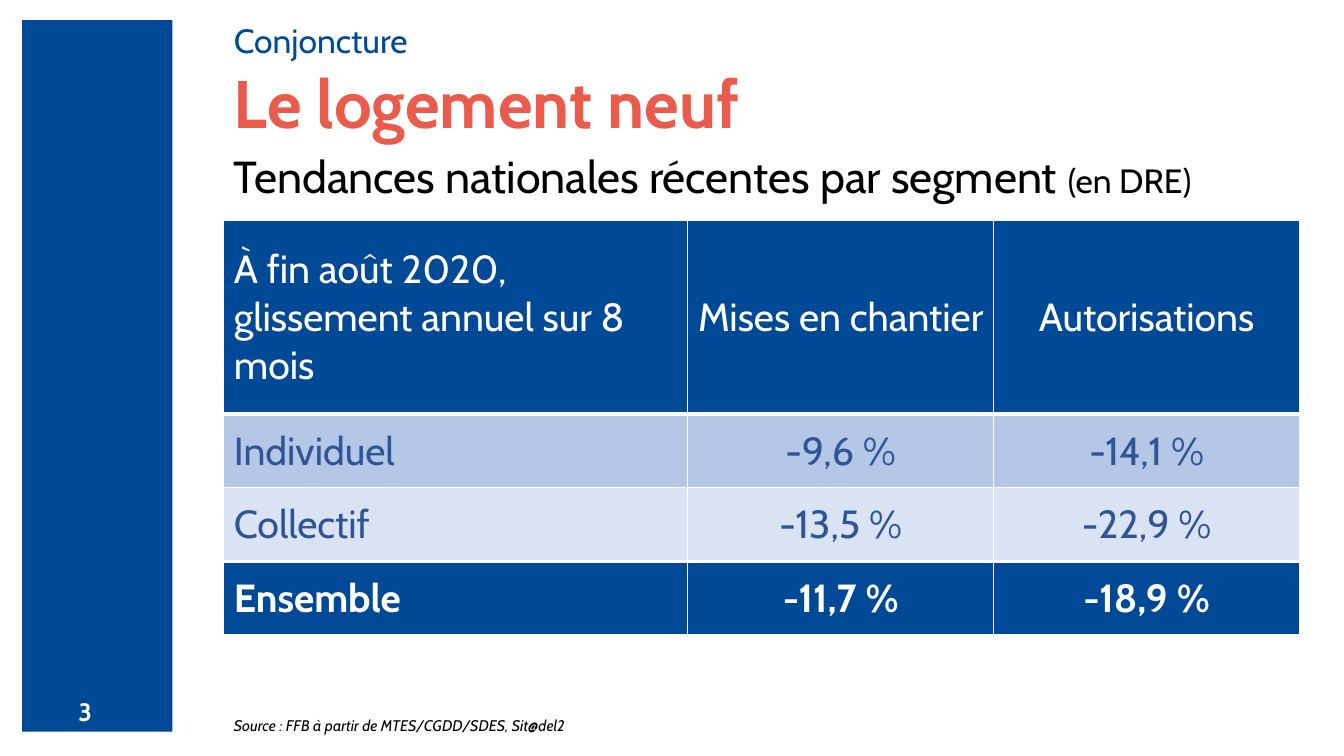
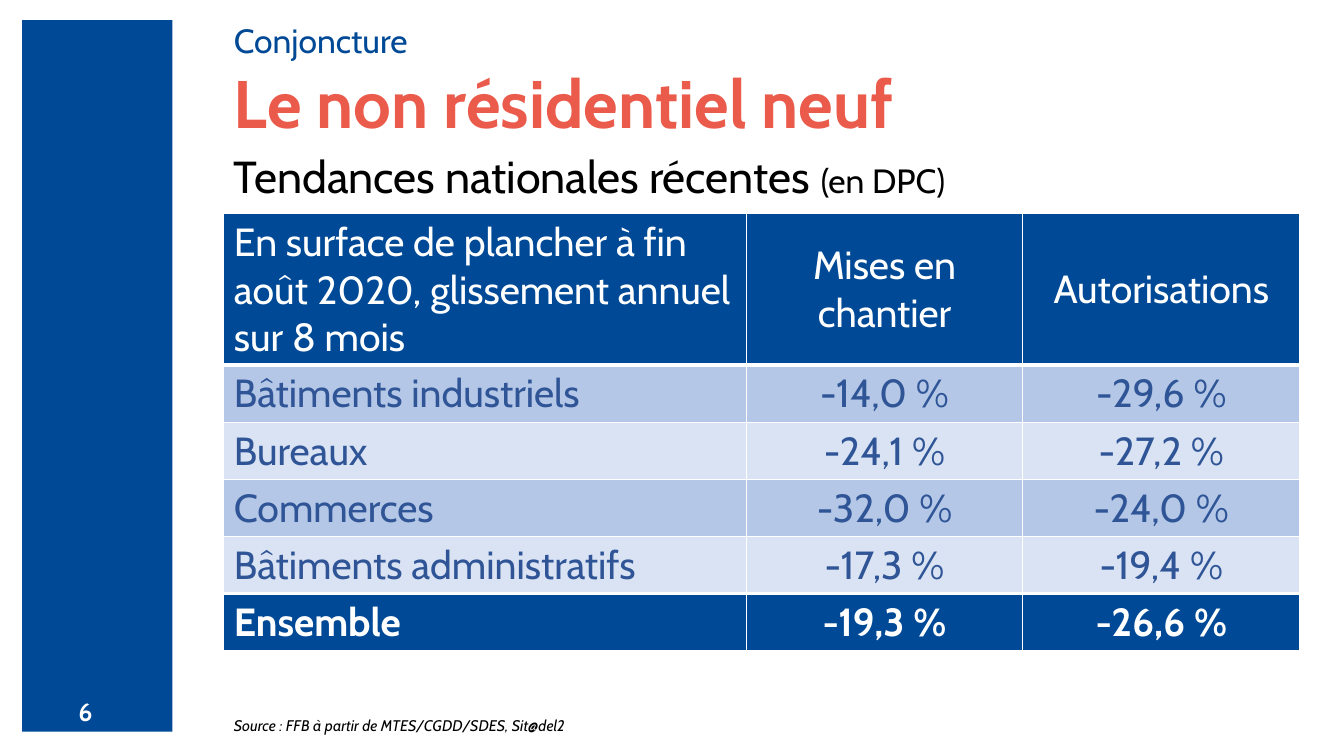
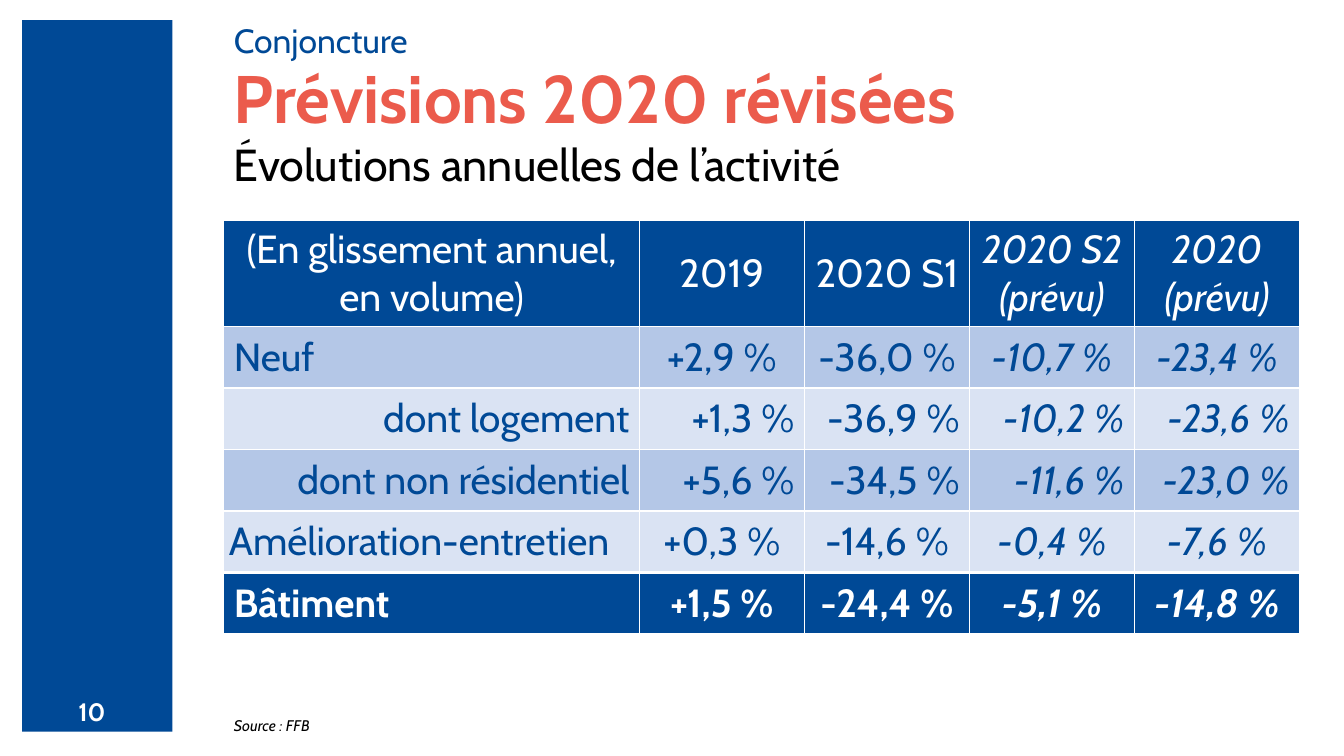
from dataclasses import dataclass

from lxml.etree import SubElement
from pptx import Presentation
from pptx.dml.color import RGBColor
from pptx.enum.shapes import MSO_SHAPE as Shape
from pptx.enum.text import MSO_ANCHOR as Anchor, MSO_AUTO_SIZE as AutoSize, PP_ALIGN as Align
from pptx.oxml.ns import qn
from pptx.util import Inches, Pt

BLUE = RGBColor(0x00, 0x49, 0x96)
SLATE = RGBColor(0x2F, 0x55, 0x97)
CORAL = RGBColor(0xEB, 0x5B, 0x4C)
WHITE = RGBColor(0xFF, 0xFF, 0xFF)
BLACK = RGBColor(0x00, 0x00, 0x00)
BANDS = (RGBColor(0xB4, 0xC7, 0xE7), RGBColor(0xDA, 0xE3, 0xF3))
FONT = "Cabin"
COMPARISON_LAYOUT = 4
LEFT, TEXT_WIDTH, TABLE_WIDTH = 2.22, 10.66, 10.67


@dataclass
class Trend:
    """Content and measures of one table slide."""

    page: int
    headline: str
    subtitle: str
    unit: str
    source: str
    rows: list
    label_width: float
    header_height: float
    row_height: float
    table_top: float = 2.19
    headline_top: float = 0.65
    subtitle_top: float = 1.49
    label_color: RGBColor = SLATE
    header_rule: float = 3
    header_align: Align = Align.LEFT
    forecast_from: int = 99
    detail_rows: tuple = ()
    tight_rows: tuple = ()


def style(paragraph, size, color, bold=False, italic=False):
    """Format every run of a paragraph."""
    for run in paragraph.runs:
        font = run.font
        font.name, font.size = FONT, Pt(size)
        font.bold, font.italic = bold, italic
        font.color.rgb = color


def place(shape, box):
    """Move a shape to a box given in inches."""
    shape.left, shape.top, shape.width, shape.height = map(Inches, box)


def fill_placeholder(holder, box, text, size, color, bold=False, italic=False, anchor=Anchor.TOP):
    """Place a template placeholder and write one plain line in it."""
    place(holder, box)
    frame = holder.text_frame
    frame.text = text
    frame.word_wrap, frame.auto_size = True, AutoSize.NONE
    frame.vertical_anchor = anchor
    line = frame.paragraphs[0]
    properties = line._p.get_or_add_pPr()
    properties.set("marL", "0")
    properties.set("indent", "0")
    SubElement(properties, qn("a:buNone"))
    line.alignment, line.line_spacing, line.space_before = Align.LEFT, 0.9, Pt(0)
    style(line, size, color, bold, italic)
    return line


def add_side_band(slide, page, box):
    """Draw the blue side band with the page number at its foot."""
    left, top, width, height = box
    band = slide.shapes.add_shape(Shape.RECTANGLE, *map(Inches, box))
    band.shadow.inherit = False
    band.fill.solid()
    band.fill.fore_color.rgb = BLUE
    band.line.fill.background()
    number = slide.shapes.add_textbox(
        Inches(left + 0.46), Inches(top + height - 0.4), Inches(0.56), Inches(0.4))
    number.text_frame.word_wrap = True
    number.text_frame.text = str(page)
    style(number.text_frame.paragraphs[0], 18, WHITE, bold=True)


def add_headings(slide, trend):
    """Fill the title, headline, subtitle and source placeholders."""
    title, headline, subtitle, source, spare = slide.placeholders
    fill_placeholder(title, (LEFT, 0.26, TEXT_WIDTH, 0.39), "Conjoncture", 24, BLUE,
                     anchor=Anchor.BOTTOM)
    fill_placeholder(headline, (LEFT, trend.headline_top, TEXT_WIDTH, 0.83),
                     trend.headline, 48, CORAL, bold=True)
    line = fill_placeholder(subtitle, (LEFT, trend.subtitle_top, TEXT_WIDTH, 0.5),
                            trend.subtitle, 32, BLACK)
    if trend.unit:
        unit = line.add_run()
        unit.text = trend.unit
        unit.font.name, unit.font.size, unit.font.bold = FONT, Pt(24), False
        unit.font.color.rgb = BLACK
    fill_placeholder(source, (LEFT, 7.07, 3.89, 0.24), trend.source, 11, BLACK, italic=True)
    spare._element.getparent().remove(spare._element)


def set_borders(cell, top, bottom):
    """Give a cell white borders, with its own top and bottom weights."""
    properties = cell._tc.get_or_add_tcPr()
    sides = (("a:lnL", 1), ("a:lnR", 1), ("a:lnT", top), ("a:lnB", bottom))
    for position, (tag, weight) in enumerate(sides):
        edge = SubElement(properties, qn(tag), w=str(Pt(weight)))
        SubElement(SubElement(edge, qn("a:solidFill")), qn("a:srgbClr"), val=str(WHITE))
        properties.insert(position, edge)


def add_trend_table(slide, trend, box):
    """Build the table: header row, striped segments and a total row."""
    last = len(trend.rows) - 1
    columns = len(trend.rows[0])
    table = slide.shapes.add_table(last + 1, columns, *map(Inches, box)).table
    table.first_row = table.horz_banding = False
    value_width = (box[2] - trend.label_width) / (columns - 1)
    for c, column in enumerate(table.columns):
        column.width = Inches(value_width if c else trend.label_width)
    rules = [1, trend.header_rule] + [1] * (last - 2) + [2.25, 1]

    for r, texts in enumerate(trend.rows):
        table.rows[r].height = Inches(trend.row_height if r else trend.header_height)
        strong = r in (0, last)
        for c, text in enumerate(texts):
            cell = table.cell(r, c)
            cell.text = text
            cell.vertical_anchor = Anchor.MIDDLE
            cell.fill.solid()
            cell.fill.fore_color.rgb = BLUE if strong else BANDS[(r - 1) % 2]
            set_borders(cell, rules[r], rules[r + 1])
            if c == 0 and r in trend.tight_rows:
                cell.margin_left = cell.margin_right = Inches(0.05)
            line = cell.text_frame.paragraphs[0]
            if r in trend.detail_rows:
                line.alignment = Align.RIGHT
            elif c:
                line.alignment = Align.CENTER
            else:
                line.alignment = Align.LEFT if r else trend.header_align
            style(line, 28, WHITE if strong else trend.label_color,
                  bold=r == last, italic=c >= trend.forecast_from)


def add_trend_slide(deck, trend):
    """Add one complete table slide."""
    slide = deck.slides.add_slide(deck.slide_layouts[COMPARISON_LAYOUT])
    add_side_band(slide, trend.page, (0.22, 0.2, 1.49, 7.06))
    add_headings(slide, trend)
    height = trend.header_height + trend.row_height * (len(trend.rows) - 1)
    add_trend_table(slide, trend, (LEFT, trend.table_top, TABLE_WIDTH, height))


SITADEL = "Source : FFB à partir de MTES/CGDD/SDES, Sit@del2"

TRENDS = [
    Trend(
        3, "Le logement neuf", "Tendances nationales récentes par segment ", "(en DRE)", SITADEL,
        [
            ("À fin août 2020, glissement annuel sur 8 mois", "Mises en chantier", "Autorisations"),
            ("Individuel", "-9,6 %", "-14,1 %"),
            ("Collectif", "-13,5 %", "-22,9 %"),
            ("Ensemble", "-11,7 %", "-18,9 %"),
        ],
        label_width=4.6, header_height=1.92, row_height=0.73,
    ),
    Trend(
        6, "Le non résidentiel neuf", "Tendances nationales récentes ", "(en DPC)", SITADEL,
        [
            ("En surface de plancher à fin août 2020, glissement annuel sur 8 mois",
             "Mises en chantier", "Autorisations"),
            ("Bâtiments industriels", "-14,0 %", "-29,6 %"),
            ("Bureaux", "-24,1 %", "-27,2 %"),
            ("Commerces", "-32,0 %", "-24,0 %"),
            ("Bâtiments administratifs", "-17,3 %", "-19,4 %"),
            ("Ensemble", "-19,3 %", "-26,6 %"),
        ],
        label_width=5.18, header_height=1.45, row_height=0.55, table_top=2.12,
    ),
    Trend(
        10, "Prévisions 2020 révisées", "Évolutions annuelles de l’activité", "", "Source : FFB",
        [
            ("(En glissement annuel, en volume)", "2019", "2020 S1", "2020 S2 (prévu)",
             "2020 (prévu)"),
            ("Neuf", "+2,9 %", "-36,0 %", "-10,7 %", "-23,4 %"),
            ("dont logement", "+1,3 %", "-36,9 %", "-10,2 %", "-23,6 %"),
            ("dont non résidentiel", "+5,6 %", "-34,5 %", "-11,6 %", "-23,0 %"),
            ("Amélioration-entretien", "+0,3 %", "-14,6 %", "-0,4 %", "-7,6 %"),
            ("Bâtiment", "+1,5 %", "-24,4 %", "-5,1 %", "-14,8 %"),
        ],
        label_width=4.12, header_height=1.05, row_height=0.61,
        headline_top=0.6, subtitle_top=1.37, label_color=BLUE, header_rule=1,
        header_align=Align.CENTER, forecast_from=3, detail_rows=(2, 3), tight_rows=(4,),
    ),
]


def main():
    """Build and save the deck."""
    deck = Presentation()
    deck.slide_width, deck.slide_height = Inches(13.33), Inches(7.5)
    for trend in TRENDS:
        add_trend_slide(deck, trend)
    deck.save("out.pptx")


if __name__ == "__main__":
    main()
